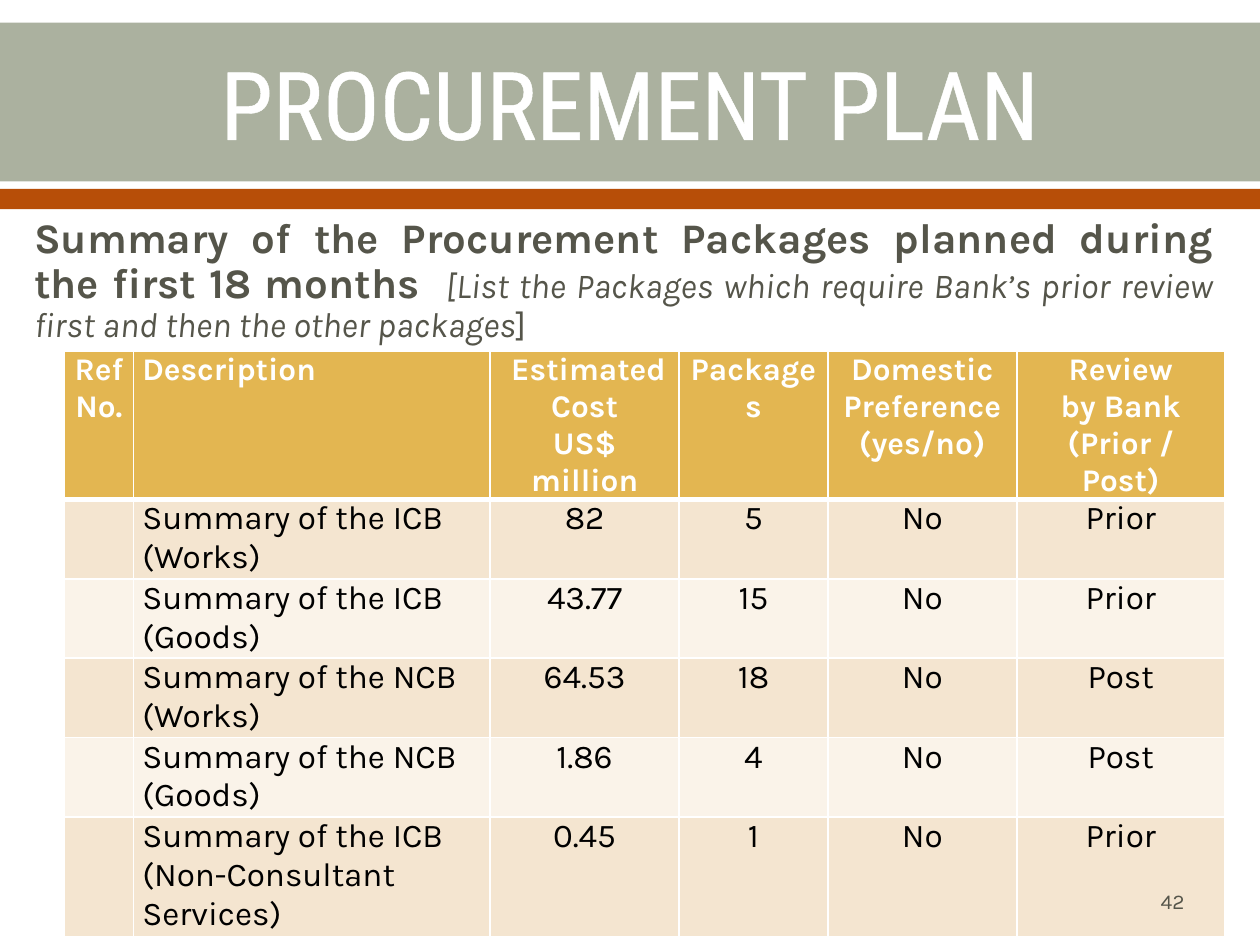
from dataclasses import dataclass

import lxml.etree
import pptx
import pptx.dml.color
import pptx.enum.shapes
import pptx.enum.text
import pptx.oxml
import pptx.oxml.ns
import pptx.util

Inches = pptx.util.Inches
RGBColor = pptx.dml.color.RGBColor
Align = pptx.enum.text.PP_ALIGN
Anchor = pptx.enum.text.MSO_ANCHOR
qualified = pptx.oxml.ns.qn

WHITE = RGBColor(0xFF, 0xFF, 0xFF)
BLACK = RGBColor(0x00, 0x00, 0x00)
SAGE = RGBColor(0xAB, 0xB1, 0x9F)
RUST = RGBColor(0xB7, 0x4E, 0x08)
OLIVE = RGBColor(0x55, 0x55, 0x4A)
GOLD = RGBColor(0xE3, 0xB6, 0x51)
SAND = RGBColor(0xF4, 0xE5, 0xD0)
CREAM = RGBColor(0xFA, 0xF3, 0xE9)


@dataclass(frozen=True)
class Band:
    top: float
    height: float
    color: RGBColor


@dataclass(frozen=True)
class Style:
    size: float
    color: RGBColor
    bold: bool = False
    italic: bool = False
    font: str = "Karla"


@dataclass(frozen=True)
class Column:
    heading: tuple[str, ...]
    width: float
    align: Align = Align.CENTER


@dataclass(frozen=True)
class Package:
    description: str
    cost: str
    count: str
    review: str
    height: float = 0.63
    preference: str = "No"

    def values(self) -> tuple[str, ...]:
        return ("", self.description, self.cost, self.count, self.preference, self.review)


BANDS = (Band(0.18, 1.26, SAGE), Band(1.5, 0.16, RUST))
COLUMNS = (
    Column(("Ref No.",), 0.55),
    Column(("Description",), 2.83, Align.LEFT),
    Column((" Estimated", "Cost", "US$ million"), 1.5),
    Column(("Packages",), 1.18),
    Column(("Domestic Preference", "(yes/no)"), 1.5),
    Column(("Review", "by Bank", "(Prior / Post)"), 1.65),
)
PACKAGES = (
    Package("Summary of the ICB (Works)", "82", "5", "Prior"),
    Package("Summary of the ICB (Goods)", "43.77", "15", "Prior"),
    Package("Summary of the NCB (Works)", "64.53", "18", "Post"),
    Package("Summary of the NCB (Goods)", "1.86", "4", "Post"),
    Package("Summary of the ICB (Non-Consultant Services)", "0.45", "1", "Prior", 0.95),
)
HEADER_HEIGHT = 1.04
TITLE = Style(54, WHITE, font="Roboto Condensed")
HEADING = Style(18, WHITE, bold=True)
VALUE = Style(19, BLACK)
SUMMARY = (
    ("Summary of the Procurement Packages planned during the first 18 months  ",
     Style(24, OLIVE, bold=True)),
    ("[List the Packages which require Bank’s prior review first and then the other packages",
     Style(20, OLIVE, italic=True)),
    ("]", Style(20, OLIVE)),
)


def place(shape, left: float, top: float, width: float, height: float) -> None:
    shape.left, shape.top = Inches(left), Inches(top)
    shape.width, shape.height = Inches(width), Inches(height)
    shape.text_frame.auto_size = pptx.enum.text.MSO_AUTO_SIZE.NONE


def add_span(para, text: str, style: Style) -> None:
    span = para.add_run()
    span.text = text
    span.font.name = style.font
    span.font.size = pptx.util.Pt(style.size)
    span.font.bold = style.bold
    span.font.italic = style.italic
    span.font.color.rgb = style.color


def make_line(tag: str, points: float, color: RGBColor):
    namespace = pptx.oxml.ns.nsdecls("a")
    return pptx.oxml.parse_xml(
        f'<a:{tag} {namespace} w="{int(pptx.util.Pt(points))}">'
        f'<a:solidFill><a:srgbClr val="{color}"/></a:solidFill></a:{tag}>'
    )


def add_band(page, band: Band, width: int) -> None:
    shape = page.shapes.add_shape(
        pptx.enum.shapes.MSO_SHAPE.RECTANGLE,
        0, Inches(band.top), width, Inches(band.height),
    )
    shape.shadow.inherit = False
    shape.fill.solid()
    shape.fill.fore_color.rgb = band.color
    shape.line.fill.background()
    page.shapes.title.element.addprevious(shape.element)


def add_title(page) -> None:
    title = page.shapes.title
    place(title, 0.5, 0.2, 9, 1.22)
    title.text_frame.vertical_anchor = Anchor.MIDDLE
    para = title.text_frame.paragraphs[0]
    para.alignment = Align.CENTER
    add_span(para, "PROCUREMENT PLAN", TITLE)
    title.element.find(".//" + qualified("a:rPr")).insert(0, make_line("ln", 1.1, WHITE))


def add_summary(page) -> None:
    body = page.placeholders[1]
    place(body, 0.17, 1.67, 9.56, 5.85)
    para = body.text_frame.paragraphs[0]
    para.alignment = Align.JUSTIFY
    para.line_spacing = 0.9
    para.space_before = pptx.util.Pt(0)
    para.space_after = pptx.util.Pt(8)
    for text, style in SUMMARY:
        add_span(para, text, style)
    properties = body.element.find(".//" + qualified("a:pPr"))
    properties.set("marL", "0")
    properties.set("indent", "0")
    lxml.etree.SubElement(properties, qualified("a:buNone"))


def fill_cell(cell, lines: tuple[str, ...], align: Align, style: Style,
              color: RGBColor) -> None:
    cell.margin_left = cell.margin_right = Inches(0.07)
    cell.margin_top = cell.margin_bottom = 0
    cell.fill.solid()
    cell.fill.fore_color.rgb = color
    for index, text in enumerate(lines):
        para = cell.text_frame.add_paragraph() if index else cell.text_frame.paragraphs[0]
        para.alignment = align
        if text:
            add_span(para, text, style)


def add_borders(frame) -> None:
    for number, row in enumerate(frame.element.iter(qualified("a:tr"))):
        top = 3 if number == 1 else 1
        bottom = 3 if number == 0 else 1
        sides = (("lnL", 1), ("lnR", 1), ("lnT", top), ("lnB", bottom))
        for properties in row.iter(qualified("a:tcPr")):
            for index, (tag, points) in enumerate(sides):
                properties.insert(index, make_line(tag, points, WHITE))


def add_packages(page) -> None:
    heights = [HEADER_HEIGHT] + [package.height for package in PACKAGES]
    frame = page.shapes.add_table(
        len(heights), len(COLUMNS), Inches(0.51), Inches(2.79),
        Inches(sum(column.width for column in COLUMNS)), Inches(sum(heights)),
    )
    table = frame.table
    for row, height in zip(table.rows, heights):
        row.height = Inches(height)
    for index, column in enumerate(COLUMNS):
        table.columns[index].width = Inches(column.width)
        fill_cell(table.cell(0, index), column.heading, column.align, HEADING, GOLD)
        for number, package in enumerate(PACKAGES, 1):
            fill_cell(table.cell(number, index), (package.values()[index],), column.align,
                      VALUE, SAND if number % 2 else CREAM)
    add_borders(frame)


def add_page_number(page) -> None:
    box = page.shapes.add_textbox(Inches(7.17), Inches(6.95), Inches(2.33), Inches(0.4))
    box.text_frame.word_wrap = True
    box.text_frame.vertical_anchor = Anchor.MIDDLE
    para = box.text_frame.paragraphs[0]
    para.alignment = Align.RIGHT
    add_span(para, "42", Style(12, OLIVE))


def main() -> None:
    deck = pptx.Presentation()
    deck.slide_width, deck.slide_height = Inches(10), Inches(7.5)
    page = deck.slides.add_slide(deck.slide_layouts[1])
    for band in BANDS:
        add_band(page, band, deck.slide_width)
    add_title(page)
    add_summary(page)
    add_packages(page)
    add_page_number(page)
    deck.save("out.pptx")


if __name__ == "__main__":
    main()
